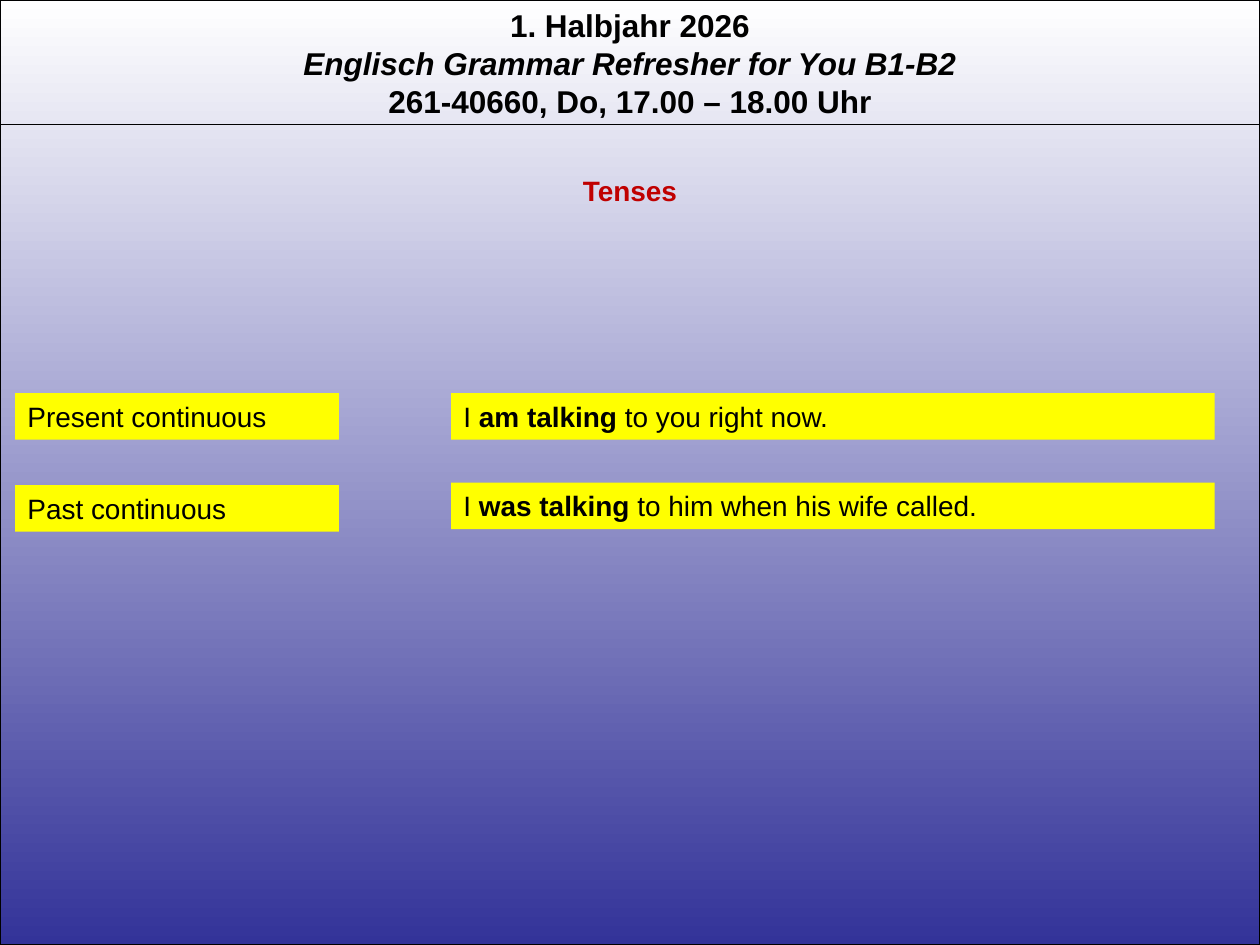
from dataclasses import dataclass

from lxml import etree
from pptx import Presentation
from pptx.dml.color import RGBColor
from pptx.enum.shapes import MSO_CONNECTOR, MSO_SHAPE
from pptx.enum.text import MSO_ANCHOR, PP_ALIGN
from pptx.oxml.ns import qn
from pptx.util import Inches, Pt

RECT = MSO_SHAPE.RECTANGLE
STRAIGHT = MSO_CONNECTOR.STRAIGHT
TOP = MSO_ANCHOR.TOP
LEFT = PP_ALIGN.LEFT
CENTER = PP_ALIGN.CENTER


@dataclass(frozen=True)
class Theme:
    font: str = "Arial"
    head: Pt = Pt(18)
    body: Pt = Pt(16)
    rule: Pt = Pt(0.75)
    black: RGBColor = RGBColor(0, 0, 0)
    white: RGBColor = RGBColor(255, 255, 255)
    blue: RGBColor = RGBColor(0x33, 0x33, 0x99)
    red: RGBColor = RGBColor(0xC0, 0, 0)
    yellow: RGBColor = RGBColor(255, 255, 0)


@dataclass(frozen=True)
class Span:
    text: str
    bold: bool = False
    italic: bool = False


@dataclass(frozen=True)
class Box:
    left: float
    top: float
    width: float
    height: float
    lines: list[list[Span]]
    size: Pt
    color: RGBColor
    align: PP_ALIGN = LEFT
    fill: RGBColor | None = None


@dataclass(frozen=True)
class Tense:
    name: str
    name_top: float
    spans: list[Span]
    text_top: float


THEME = Theme()
WIDTH, HEIGHT = 10, 7.5
ROW = 0.37
RULE_TOP = 0.99

TITLE = [
    [Span("1. Halbjahr 2026", bold=True)],
    [Span("Englisch Grammar Refresher for You B1-B2", bold=True, italic=True)],
    [Span("261-40660, Do, 17.00 – 18.00 Uhr", bold=True)],
]
TENSES = [
    Tense(
        "Present continuous", 3.12,
        [Span("I "), Span("am talking ", bold=True), Span("to you right now.")], 3.12,
    ),
    Tense(
        "Past continuous", 3.85,
        [Span("I "), Span("was talking ", bold=True),
         Span("to him when his wife called.")], 3.83,
    ),
]


def draw_back(slide) -> None:
    back = slide.shapes.add_shape(RECT, 0, 0, Inches(WIDTH), Inches(HEIGHT))
    back.shadow.inherit = False
    back.fill.gradient()
    back.fill.gradient_angle = 270
    for stop, color, place in zip(
        back.fill.gradient_stops, (THEME.white, THEME.blue), (0, 1)
    ):
        stop.color.rgb = color
        stop.position = place
    back.line.color.rgb = THEME.black
    back.line.width = THEME.rule


def draw_rule(slide) -> None:
    top = Inches(RULE_TOP)
    rule = slide.shapes.add_connector(STRAIGHT, 0, top, Inches(WIDTH), top)
    rule.line.color.rgb = THEME.black
    rule.line.width = THEME.rule
    etree.SubElement(rule._element.spPr, qn("a:effectLst"))


def draw_box(slide, box: Box) -> None:
    shape = slide.shapes.add_textbox(
        Inches(box.left), Inches(box.top), Inches(box.width), Inches(box.height)
    )
    if box.fill is not None:
        shape.fill.solid()
        shape.fill.fore_color.rgb = box.fill
    frame = shape.text_frame
    frame.word_wrap = True
    frame.vertical_anchor = TOP
    frame.text = "\n".join(line[0].text for line in box.lines)
    for para, line in zip(frame.paragraphs, box.lines):
        para.alignment = box.align
        for span in line[1:]:
            para.add_run().text = span.text
        for run, span in zip(para.runs, line):
            font = run.font
            font.name = THEME.font
            font.size = box.size
            font.color.rgb = box.color
            font.bold = span.bold
            font.italic = span.italic


def draw_tense(slide, tense: Tense) -> None:
    cells = (
        (0.12, tense.name_top, 2.57, [Span(tense.name)]),
        (3.58, tense.text_top, 6.06, tense.spans),
    )
    for left, top, width, spans in cells:
        draw_box(slide, Box(left, top, width, ROW, [spans], THEME.body,
                            THEME.black, fill=THEME.yellow))


def main() -> None:
    deck = Presentation()
    deck.slide_width = Inches(WIDTH)
    deck.slide_height = Inches(HEIGHT)
    slide = deck.slides.add_slide(deck.slide_layouts[6])
    draw_back(slide)
    draw_box(slide, Box(0, 0, WIDTH, 1.01, TITLE, THEME.head, THEME.black, CENTER))
    draw_rule(slide)
    draw_box(slide, Box(0, 1.33, WIDTH, ROW, [[Span("Tenses", bold=True)]],
                        THEME.body, THEME.red, CENTER))
    for tense in TENSES:
        draw_tense(slide, tense)
    deck.save("out.pptx")


if __name__ == "__main__":
    main()
